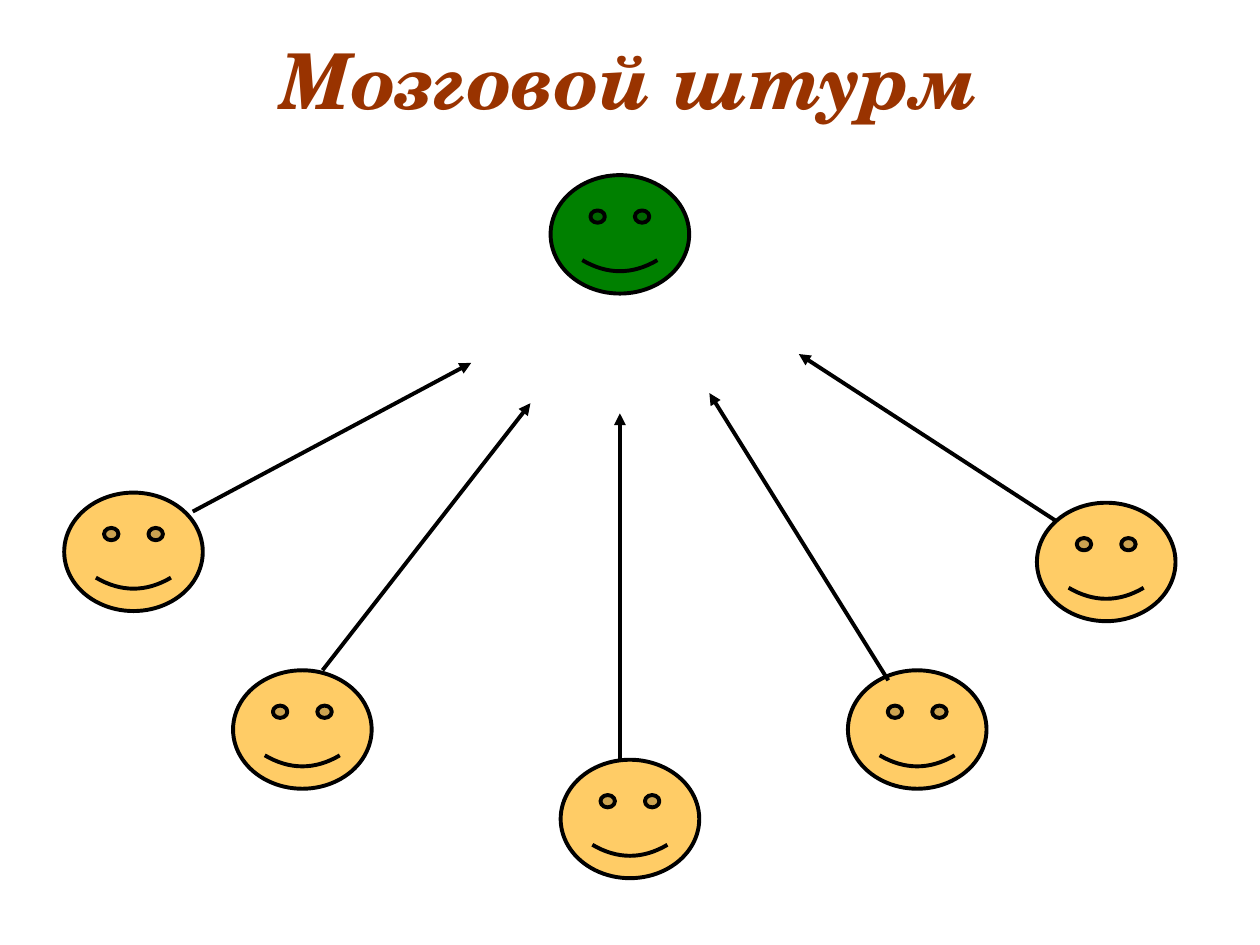
from dataclasses import dataclass

from lxml import etree
from pptx import Presentation
from pptx import util as u
from pptx.dml.color import RGBColor
from pptx.enum import shapes, text
from pptx.oxml import ns

COLORS = {
    "title": "993300",
    "leader": "008000",
    "member": "FFCC66",
    "outline": "000000",
}
FONT = "TeX Gyre Schola"
FACE_WIDTH, FACE_HEIGHT = 1.1, 0.94
SMILE = 0.047
LINE_WIDTH = u.Pt(2.25)


@dataclass(frozen=True)
class Face:
    left: float
    top: float
    color: str = "member"


@dataclass(frozen=True)
class Arrow:
    start: tuple[float, float]
    end: tuple[float, float]


FACES = [
    Face(4.37, 1.39, "leader"),
    Face(4.45, 6.03),
    Face(8.23, 3.99),
    Face(6.73, 5.32),
    Face(1.85, 5.32),
    Face(0.51, 3.91),
]
ARROWS = [
    Arrow((1.53, 4.06), (3.74, 2.88)),
    Arrow((2.56, 5.32), (4.21, 3.2)),
    Arrow((4.92, 6.03), (4.92, 3.28)),
    Arrow((7.05, 5.4), (5.63, 3.12)),
    Arrow((8.39, 4.14), (6.34, 2.81)),
]


def color(name: str) -> RGBColor:
    return RGBColor.from_string(COLORS[name])


def style_line(line) -> None:
    line.color.rgb = color("outline")
    line.width = LINE_WIDTH


def add_title(slide, title: str) -> None:
    box = slide.shapes.add_textbox(
        u.Inches(0.27), u.Inches(0.21), u.Inches(9.45), u.Inches(0.83)
    )
    frame = box.text_frame
    frame.word_wrap = True
    frame.auto_size = text.MSO_AUTO_SIZE.SHAPE_TO_FIT_TEXT
    paragraph = frame.paragraphs[0]
    paragraph.alignment = text.PP_ALIGN.CENTER
    run = paragraph.add_run()
    run.text = title
    font = run.font
    font.name = FONT
    font.size = u.Pt(44)
    font.bold = font.italic = True
    font.color.rgb = color("title")


def add_face(slide, face: Face) -> None:
    shape = slide.shapes.add_shape(
        shapes.MSO_SHAPE.SMILEY_FACE,
        u.Inches(face.left),
        u.Inches(face.top),
        u.Inches(FACE_WIDTH),
        u.Inches(FACE_HEIGHT),
    )
    shape.adjustments[0] = SMILE
    shape.shadow.inherit = False
    shape.fill.solid()
    shape.fill.fore_color.rgb = color(face.color)
    style_line(shape.line)


def add_arrow(slide, arrow: Arrow) -> None:
    points = [u.Inches(value) for value in arrow.start + arrow.end]
    connector = slide.shapes.add_connector(shapes.MSO_CONNECTOR.STRAIGHT, *points)
    style_line(connector.line)
    outline = connector.line._get_or_add_ln()
    etree.SubElement(outline, ns.qn("a:tailEnd"), type="triangle")
    etree.SubElement(connector._element.spPr, ns.qn("a:effectLst"))


def main() -> None:
    presentation = Presentation()
    presentation.slide_width = u.Inches(10)
    presentation.slide_height = u.Inches(7.5)
    slide = presentation.slides.add_slide(presentation.slide_layouts[6])
    add_title(slide, "Мозговой штурм")
    for face in FACES:
        add_face(slide, face)
    for arrow in ARROWS:
        add_arrow(slide, arrow)
    presentation.save("out.pptx")


if __name__ == "__main__":
    main()
